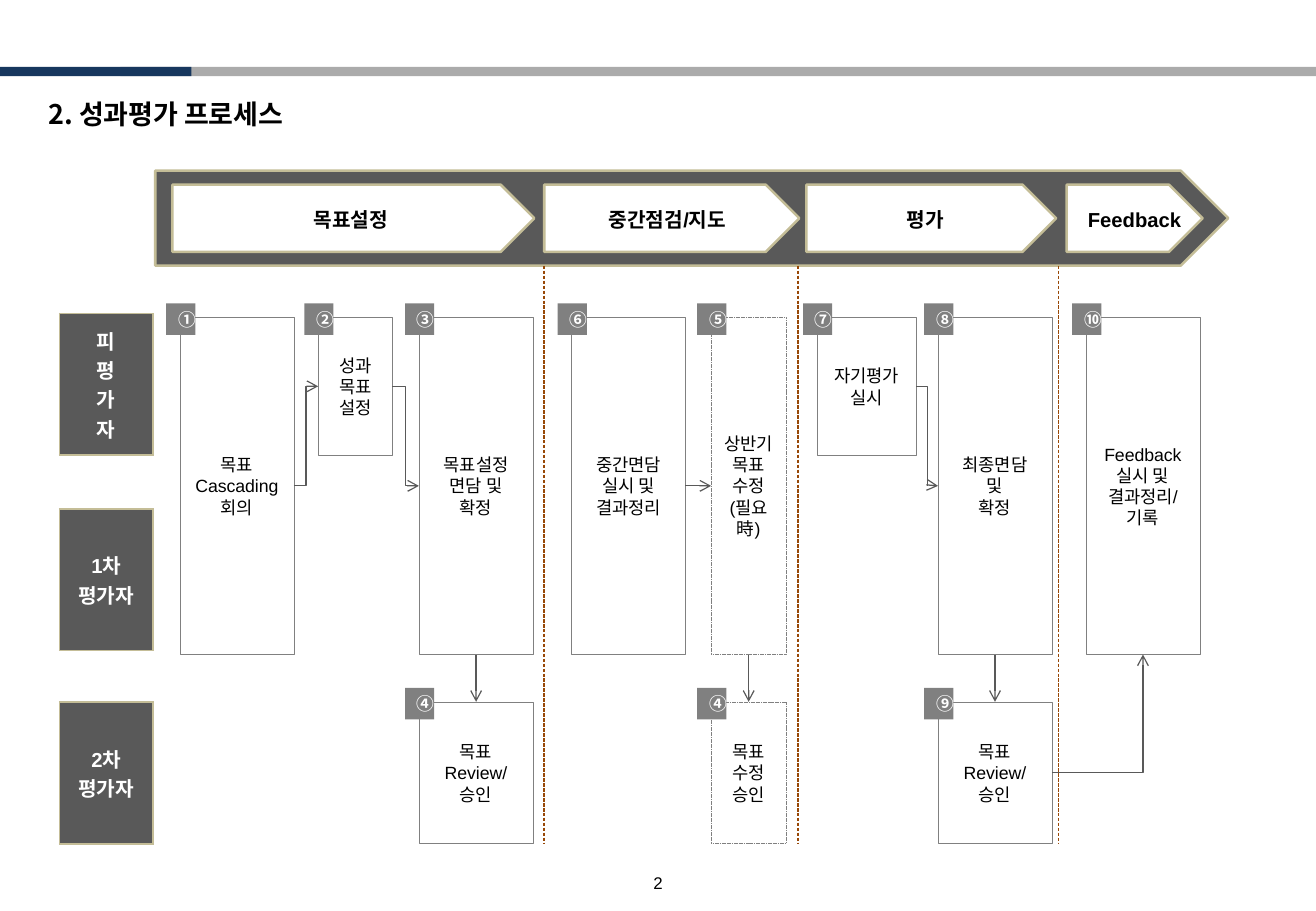
from dataclasses import dataclass

from lxml.etree import SubElement
from pptx import Presentation
from pptx.dml.color import RGBColor
from pptx.enum.dml import MSO_LINE
from pptx.enum.shapes import MSO_CONNECTOR as Connector, MSO_SHAPE as Shape
from pptx.enum.text import MSO_ANCHOR as Anchor, PP_ALIGN as Align
from pptx.oxml.ns import qn
from pptx.util import Pt


@dataclass(frozen=True)
class Theme:
    latin: str = "Arial"
    korean: str = "Noto Sans CJK KR"
    white: str = "FFFFFF"
    black: str = "000000"
    navy: str = "17375E"
    silver: str = "ABABAB"
    dark: str = "595959"
    grey: str = "808080"
    sand: str = "C4BD97"
    brown: str = "984807"
    title: float = 16
    heading: float = 12
    body: float = 10.5
    page: float = 10


THEME = Theme()
TOP, LEFT, BOTTOM, RIGHT = range(4)  # connection sites of a rectangle

STEP_TOP, REVIEW_TOP = 188, 416
TALL, SHORT, REVIEW = 200, 82, 84
BADGE_OFFSET = 8.2

# key: number, left, top, width, height, lines, optional step
STEPS = {
    "meeting": ("①", 106.7, STEP_TOP, 67.5, TALL, "목표\nCascading\n회의", False),
    "goals": ("②", 188.6, STEP_TOP, 44, SHORT, "성과\n목표\n설정", False),
    "agreed": ("③", 248.3, STEP_TOP, 67.8, TALL, "목표설정\n면담 및\n확정", False),
    "review": ("④", 248.3, REVIEW_TOP, 67.8, REVIEW, "목표\nReview/\n승인", False),
    "interim": ("⑥", 338.8, STEP_TOP, 67.5, TALL, "중간면담\n실시 및\n결과정리", False),
    "revision": ("⑤", 421.5, STEP_TOP, 44.5, TALL, "상반기\n목표\n수정\n(필요\n時)", True),
    "approval": ("④", 421.5, REVIEW_TOP, 44.5, REVIEW, "목표\n수정\n승인", True),
    "self": ("⑦", 484.2, STEP_TOP, 59, SHORT, "자기평가\n실시", False),
    "final": ("⑧", 556, STEP_TOP, 67.5, TALL, "최종면담\n및\n확정", False),
    "final_review": ("⑨", 556, REVIEW_TOP, 67.5, REVIEW, "목표\nReview/\n승인", False),
    "feedback": ("⑩", 643.7, STEP_TOP, 67.5, TALL, "Feedback\n실시 및\n결과정리/\n기록", False),
}

FLOWS = [
    ("meeting", RIGHT, "goals", LEFT, "bentConnector3"),
    ("goals", RIGHT, "agreed", LEFT, "bentConnector3"),
    ("agreed", BOTTOM, "review", TOP, "line"),
    ("interim", RIGHT, "revision", LEFT, "line"),
    ("revision", BOTTOM, "approval", TOP, "line"),
    ("self", RIGHT, "final", LEFT, "bentConnector3"),
    ("final", BOTTOM, "final_review", TOP, "line"),
    ("final_review", RIGHT, "feedback", BOTTOM, "bentConnector2"),
]

# label, chip left, chip width, label left, label width
PHASES = [
    ("목표설정", 102.2, 214.5, 100.8, 214.5),
    ("중간점검/지도", 322.6, 151.2, 322.6, 146),
    ("평가", 478, 148, 474.5, 148),
    ("Feedback", 632.2, 80.6, 632.2, 80.6),
]
ROLES = [("피\n평\n가\n자", 185.8), ("1차\n평가자", 301.7), ("2차\n평가자", 416.2)]
DIVIDERS = [322.4, 473, 627.6]


def color(value):
    return RGBColor.from_string(value)


def write(frame, text, size, ink=THEME.black, bold=False, align=Align.CENTER,
          font=THEME.latin, spacing=None):
    frame.text = text
    for paragraph in frame.paragraphs:
        paragraph.alignment = align
        paragraph.line_spacing = spacing
        paragraph.font.size = Pt(size)
        paragraph.font.bold = bold
        paragraph.font.color.rgb = color(ink)
        paragraph.font.name = font
        properties = paragraph._p.pPr.find(qn("a:defRPr"))
        SubElement(properties, qn("a:ea"), typeface=THEME.korean)


def add_box(slide, kind, left, top, width, height, fill=None, line=None, weight=1.5):
    shape = slide.shapes.add_shape(kind, Pt(left), Pt(top), Pt(width), Pt(height))
    shape.shadow.inherit = False
    if fill:
        shape.fill.solid()
        shape.fill.fore_color.rgb = color(fill)
    else:
        shape.fill.background()
    if line:
        shape.line.color.rgb = color(line)
        shape.line.width = Pt(weight)
    else:
        shape.line.fill.background()
    return shape


def add_label(slide, text, left, top, width, height, size, anchor=Anchor.TOP, **style):
    frame = slide.shapes.add_textbox(Pt(left), Pt(top), Pt(width), Pt(height)).text_frame
    frame.word_wrap = True
    frame.vertical_anchor = anchor
    write(frame, text, size, **style)
    return frame


def add_role(slide, text, top):
    table = slide.shapes.add_table(1, 1, Pt(35.3), Pt(top), Pt(55.4), Pt(84)).table
    table.first_row = table.horz_banding = False
    cell = table.cell(0, 0)
    cell.vertical_anchor = Anchor.MIDDLE
    cell.margin_top = cell.margin_bottom = Pt(2.9)
    write(cell.text_frame, text, THEME.heading, THEME.white, bold=True)
    properties = cell._tc.get_or_add_tcPr()
    for side in ("lnL", "lnR", "lnT", "lnB"):
        border = SubElement(properties, qn(f"a:{side}"), w=str(Pt(1)))
        paint = SubElement(border, qn("a:solidFill"))
        SubElement(paint, qn("a:srgbClr"), val=THEME.sand)
    cell.fill.solid()
    cell.fill.fore_color.rgb = color(THEME.dark)


def add_step(slide, number, left, top, width, height, text, optional):
    box = add_box(slide, Shape.RECTANGLE, left, top, width, height,
                  line=THEME.grey, weight=0.25)
    if optional:
        box.line.dash_style = MSO_LINE.SQUARE_DOT
    box.text_frame.word_wrap = False
    write(box.text_frame, text, THEME.body)
    badge = add_box(slide, Shape.RECTANGLE, left - BADGE_OFFSET, top - BADGE_OFFSET,
                    17.3, 18.7, THEME.grey)
    write(badge.text_frame, number, THEME.body, THEME.white, bold=True,
          align=Align.LEFT, font=THEME.korean)
    return box


def add_line(slide, start, end, ink, kind=Connector.STRAIGHT):
    connector = slide.shapes.add_connector(kind, *map(Pt, start + end))
    connector.line.color.rgb = color(ink)
    connector.line.width = Pt(0.75)
    SubElement(connector._element.spPr, qn("a:effectLst"))
    return connector


def add_flow(slide, source, source_site, target, target_site, preset):
    kind = Connector.STRAIGHT if preset == "line" else Connector.ELBOW
    connector = add_line(slide, (0, 0), (0, 0), THEME.dark, kind)
    connector.begin_connect(source, source_site)
    connector.end_connect(target, target_site)
    connector._element.spPr.find(qn("a:prstGeom")).set("prst", preset)
    SubElement(connector.line._get_or_add_ln(), qn("a:tailEnd"), type="arrow")


def main():
    presentation = Presentation()
    presentation.slide_width, presentation.slide_height = Pt(780), Pt(540)
    slide = presentation.slides.add_slide(presentation.slide_layouts[6])

    # Header rule, title and page number
    add_box(slide, Shape.RECTANGLE, 71.3, 39.6, 708.7, 5.6, THEME.silver)
    add_box(slide, Shape.RECTANGLE, 0, 39.6, 113.5, 5.6, THEME.navy)
    add_label(slide, "2. 성과평가 프로세스", 21.6, 54, 737, 26.6, THEME.title,
              bold=True, align=Align.LEFT, font=THEME.korean)
    page = add_label(slide, "2", 306, 514, 168, 15, THEME.page, Anchor.BOTTOM, spacing=0.7)
    page.margin_bottom = 0

    # Phase banner
    add_box(slide, Shape.PENTAGON, 92, 101.2, 636, 56.2, THEME.dark, THEME.sand)
    for text, left, width, label_left, label_width in PHASES:
        add_box(slide, Shape.PENTAGON, left, 109.5, width, 39.8, THEME.white, THEME.sand)
        add_label(slide, text, label_left, 119.5, label_width, 21.6, THEME.heading, bold=True)

    # Roles
    for text, top in ROLES:
        add_role(slide, text, top)

    # Steps and the flow between them
    boxes = {key: add_step(slide, *step) for key, step in STEPS.items()}
    for source, source_site, target, target_site, preset in FLOWS:
        add_flow(slide, boxes[source], source_site, boxes[target], target_site, preset)

    # Phase dividers
    for x in DIVIDERS:
        divider = add_line(slide, (x, 157.5), (x, 500.4), THEME.brown)
        divider.line.dash_style = MSO_LINE.SQUARE_DOT

    presentation.save("out.pptx")


if __name__ == "__main__":
    main()
